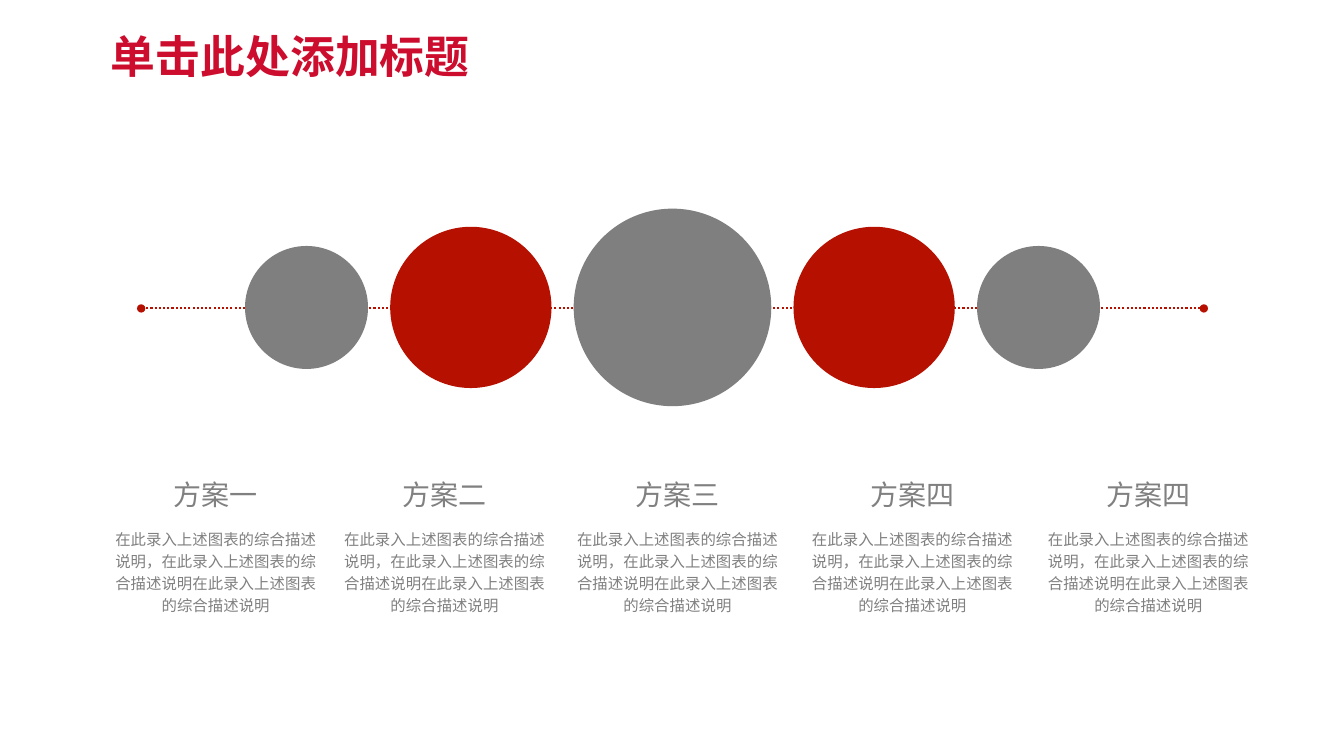
import pptx
import pptx.dml.color
import pptx.enum.dml
import pptx.enum.shapes
import pptx.enum.text
import pptx.oxml
import pptx.oxml.ns
import pptx.util

Inches, Pt = pptx.util.Inches, pptx.util.Pt
qn = pptx.oxml.ns.qn
ALIGN = pptx.enum.text.PP_ALIGN
ANCHOR = pptx.enum.text.MSO_ANCHOR

COLORS = {"title": "CC0D2E", "red": "B61000", "gray": "7F7F7F", "text": "808080"}
HAN = "Noto Sans CJK SC"
BODY = "在此录入上述图表的综合描述说明，在此录入上述图表的综合描述说明在此录入上述图表的综合描述说明"

AXIS = 3.05
GAP = 0.22
CIRCLES = [(1.22, "gray"), (1.6, "red"), (1.96, "gray"), (1.6, "red"), (1.22, "gray")]
PLANS = [(2.14, "方案一"), (4.41, "方案二"), (6.72, "方案三"), (9.05, "方案四"), (11.39, "方案四")]

TITLE = {"font": {"name": "Montserrat", "size": Pt(32), "bold": True}, "color": "title",
         "para": {"alignment": ALIGN.LEFT, "line_spacing": 0.9},
         "frame": {"word_wrap": True, "vertical_anchor": ANCHOR.MIDDLE}}
HEAD = {"font": {"name": HAN, "size": Pt(20)}, "color": "text",
        "para": {"alignment": ALIGN.CENTER, "line_spacing": 0.8, "space_after": Pt(6)},
        "frame": {"word_wrap": True, "vertical_anchor": ANCHOR.TOP}}
NOTE = {"font": {"name": HAN, "size": Pt(11)}, "color": "text",
        "para": {"alignment": ALIGN.CENTER, "line_spacing": 1.2},
        "frame": {"word_wrap": True, "vertical_anchor": ANCHOR.TOP,
                  "margin_left": Inches(0.13), "margin_right": Inches(0.13),
                  "margin_top": Inches(0.07), "margin_bottom": Inches(0.07)}}


def rgb(name):
    return pptx.dml.color.RGBColor.from_string(COLORS[name])


def apply(target, values):
    for key, value in values.items():
        setattr(target, key, value)


def add_xml(parent, tag, **attrs):
    node = pptx.oxml.parse_xml(f'<a:{tag} {pptx.oxml.ns.nsdecls("a")}/>')
    for key, value in attrs.items():
        node.set(key, value)
    parent.append(node)


def write(shape, text, style):
    """Put one styled paragraph in the shape, with a Han fallback font."""
    frame = shape.text_frame
    apply(frame, style["frame"])
    para = frame.paragraphs[0]
    apply(para, style["para"])
    run = para.add_run()
    run.text = text
    apply(run.font, style["font"])
    run.font.color.rgb = rgb(style["color"])
    for latin in shape.element.iter(qn("a:latin")):
        add_xml(latin.getparent(), "ea", typeface=HAN)


def add_text(slide, mid, top, width, height, text, style):
    box = slide.shapes.add_textbox(Inches(mid - width / 2), Inches(top),
                                   Inches(width), Inches(height))
    write(box, text, style)


def add_axis(slide):
    axis = slide.shapes.add_connector(
        pptx.enum.shapes.MSO_CONNECTOR.STRAIGHT,
        Inches(11.94), Inches(3.06), Inches(1.4), Inches(3.06))
    axis.line.color.rgb = rgb("red")
    axis.line.width = Pt(1.5)
    axis.line.dash_style = pptx.enum.dml.MSO_LINE.ROUND_DOT
    props = axis.element.spPr
    for end in ("headEnd", "tailEnd"):
        add_xml(props.find(qn("a:ln")), end, type="oval")
    add_xml(props, "effectLst")


def add_circle(slide, left, size, color):
    dot = slide.shapes.add_shape(
        pptx.enum.shapes.MSO_SHAPE.OVAL,
        Inches(left), Inches(AXIS - size / 2), Inches(size), Inches(size))
    dot.shadow.inherit = False
    dot.fill.solid()
    dot.fill.fore_color.rgb = rgb(color)
    dot.line.fill.background()


def main():
    deck = pptx.Presentation()
    deck.slide_width, deck.slide_height = Inches(13.33), Inches(7.5)
    slide = deck.slides.add_slide(deck.slide_layouts[5])

    title = slide.shapes.title
    apply(title, {"left": Inches(1), "top": Inches(0.28),
                  "width": Inches(11.5), "height": Inches(0.62)})
    write(title, "单击此处添加标题", TITLE)

    add_axis(slide)
    left = 2.43
    for size, color in CIRCLES:
        add_circle(slide, left, size, color)
        left += size + GAP

    for mid, name in PLANS:
        add_text(slide, mid, 5.15, 2.33, 1.02, BODY, NOTE)
        add_text(slide, mid, 4.75, 1.52, 0.31, name, HEAD)

    deck.save("out.pptx")


if __name__ == "__main__":
    main()
